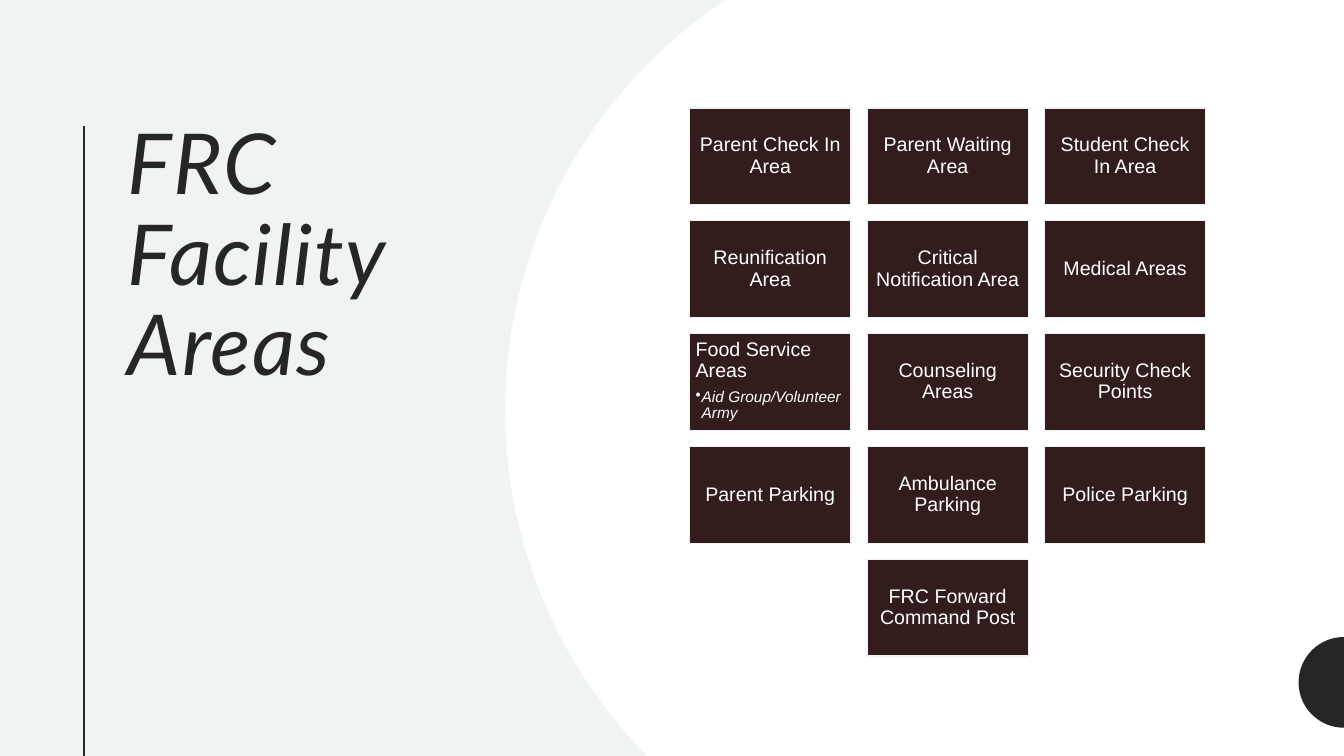
"""Build the FRC Facility Areas slide."""
from dataclasses import dataclass
from math import asin, cos, pi, sin

from lxml.etree import SubElement
from pptx import Presentation
from pptx.dml.color import RGBColor
from pptx.enum.shapes import MSO_CONNECTOR as CONN, MSO_SHAPE as SHAPE
from pptx.enum.text import MSO_ANCHOR as ANCHOR, PP_ALIGN as ALIGN
from pptx.oxml.ns import qn
from pptx.slide import Slide
from pptx.text.text import TextFrame
from pptx.util import Inches, Pt

PALE = RGBColor(0xF0, 0xF3, 0xF3)
DARK = RGBColor(0x26, 0x26, 0x26)
BROWN = RGBColor(0x32, 0x1C, 0x1C)
WHITE = RGBColor(0xFF, 0xFF, 0xFF)

WIDTH, HEIGHT = 13.33, 7.5
COLS = 3
GRID_LEFT, GRID_TOP = 6.84, 1.07
BOX_W, BOX_H = 1.6, 0.96
STEP_X, STEP_Y = 1.76, 1.12

Point = tuple[float, float]


@dataclass(frozen=True)
class Area:
    name: str
    detail: str = ""


@dataclass(frozen=True)
class Circle:
    x: float
    y: float
    r: float

    def arc(self, start: float, end: float, steps: int = 90) -> list[Point]:
        angles = (start + (end - start) * i / steps for i in range(steps + 1))
        return [(self.x + self.r * cos(a), self.y + self.r * sin(a)) for a in angles]


AREAS = [
    Area("Parent Check In Area"),
    Area("Parent Waiting Area"),
    Area("Student Check In Area"),
    Area("Reunification Area"),
    Area("Critical Notification Area"),
    Area("Medical Areas"),
    Area("Food Service Areas", "Aid Group/Volunteer Army"),
    Area("Counseling Areas"),
    Area("Security Check Points"),
    Area("Parent Parking"),
    Area("Ambulance Parking"),
    Area("Police Parking"),
    Area("FRC Forward Command Post"),
]


def add_text(tf: TextFrame, text: str, *, size: float, color: RGBColor, font: str = "Arial",
             italic: bool = False, align: ALIGN = ALIGN.LEFT, after: float = 0,
             tracking: float = 0, bullet: str = "") -> None:
    p = tf.paragraphs[0]
    if p.runs:
        p = tf.add_paragraph()
    p.text = text
    p.alignment = align
    p.line_spacing = 0.9
    p.space_after = Pt(after)
    for r in p.runs:
        r.font.name, r.font.size, r.font.italic = font, Pt(size), italic
        r.font.color.rgb = color
        if tracking:
            r.font._element.set("spc", str(round(tracking * 100)))
    if bullet:
        pPr = p._p.get_or_add_pPr()
        pPr.set("marL", str(Inches(0.06)))
        pPr.set("indent", str(Inches(-0.06)))
        SubElement(pPr, qn("a:buChar"), char=bullet)


def add_outline(s: Slide, points: list[Point], color: RGBColor) -> None:
    emu = [(Inches(x), Inches(y)) for x, y in points]
    fb = s.shapes.build_freeform(*emu[0])
    fb.add_line_segments(emu[1:], close=True)
    sp = fb.convert_to_shape()
    sp.shadow.inherit = False
    sp.fill.solid()
    sp.fill.fore_color.rgb = color
    sp.line.fill.background()


def add_backdrop(s: Slide) -> None:
    s.background.fill.solid()
    s.background.fill.fore_color.rgb = PALE
    big = Circle(9.89, 4.07, 4.88)
    low = pi - asin((HEIGHT - big.y) / big.r)
    high = pi + asin(big.y / big.r)
    add_outline(s, big.arc(low, high) + [(WIDTH, 0), (WIDTH, HEIGHT)], WHITE)
    add_outline(s, Circle(WIDTH, 6.77, 0.45).arc(pi / 2, 3 * pi / 2), DARK)


def add_title(s: Slide) -> None:
    tf = s.shapes.add_textbox(Inches(1.17), Inches(1.16), Inches(3.41), Inches(5.26)).text_frame
    tf.word_wrap = True
    add_text(tf, "FRC Facility\vAreas", size=60, color=DARK, font="Lato", italic=True, tracking=1)
    rule = s.shapes.add_connector(CONN.STRAIGHT, Inches(0.83), Inches(1.25),
                                  Inches(0.83), Inches(HEIGHT))
    rule.line.color.rgb = DARK
    rule.line.width = Pt(1.5)
    SubElement(rule._element.spPr, qn("a:effectLst"))


def add_area(s: Slide, area: Area, row: int, col: int) -> None:
    sp = s.shapes.add_shape(SHAPE.RECTANGLE, Inches(GRID_LEFT + col * STEP_X),
                            Inches(GRID_TOP + row * STEP_Y), Inches(BOX_W), Inches(BOX_H))
    sp.shadow.inherit = False
    sp.fill.solid()
    sp.fill.fore_color.rgb = BROWN
    sp.line.color.rgb = PALE
    sp.line.width = Pt(1)
    tf = sp.text_frame
    tf.word_wrap = True
    tf.margin_left = tf.margin_right = tf.margin_top = tf.margin_bottom = Inches(0.06)
    tf.vertical_anchor = ANCHOR.TOP if area.detail else ANCHOR.MIDDLE
    add_text(tf, area.name, size=14, color=WHITE, after=5,
             align=ALIGN.LEFT if area.detail else ALIGN.CENTER)
    if area.detail:
        add_text(tf, area.detail, size=11, color=WHITE, italic=True, after=1.5, bullet="•")


def main() -> None:
    prs = Presentation()
    prs.slide_width, prs.slide_height = Inches(WIDTH), Inches(HEIGHT)
    s = prs.slides.add_slide(prs.slide_layouts[6])
    add_backdrop(s)
    add_title(s)
    for i, area in enumerate(AREAS):
        row, col = divmod(i, COLS)
        in_row = min(COLS, len(AREAS) - row * COLS)
        add_area(s, area, row, col + (COLS - in_row) / 2)
    prs.save("out.pptx")


if __name__ == "__main__":
    main()
